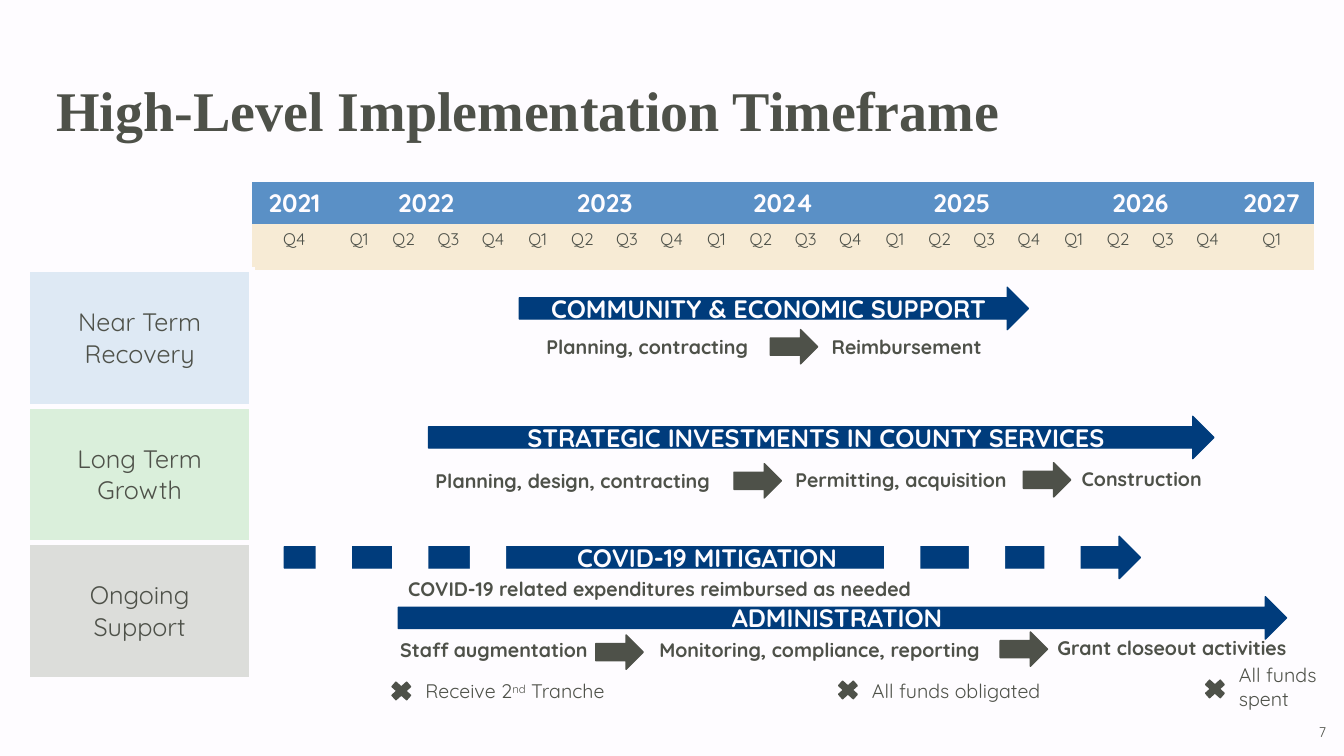
import pptx
import pptx.util
import pptx.dml.color
import pptx.enum.shapes
import pptx.enum.text
import pptx.oxml.ns
from lxml import etree

EMU_PER_PX = 9144
RGBColor = pptx.dml.color.RGBColor
Shape = pptx.enum.shapes.MSO_SHAPE
Align = pptx.enum.text.PP_ALIGN
Anchor = pptx.enum.text.MSO_ANCHOR

PAPER = RGBColor(0xFE, 0xFC, 0xFF)
INK = RGBColor(0x4E, 0x51, 0x49)
NAVY = RGBColor(0x00, 0x3C, 0x7C)
YEAR_BLUE = RGBColor(0x5A, 0x90, 0xC6)
QUARTER_SAND = RGBColor(0xF7, 0xEB, 0xD5)
TERM_BLUE = RGBColor(0xDE, 0xE9, 0xF4)
TERM_GREEN = RGBColor(0xDA, 0xEF, 0xDB)
TERM_GREY = RGBColor(0xDC, 0xDD, 0xDA)

BODY_FONT = "Quicksand"
TITLE_FONT = "Times New Roman"
NO_STYLE = "{2D5ABB26-0587-4C30-8999-92F81FD0307C}"

YEARS = range(2022, 2027)
TERMS = [
    ("Near Term Recovery", TERM_BLUE),
    ("Long Term Growth", TERM_GREEN),
    ("Ongoing\nSupport", TERM_GREY),
]
BARS = [
    ("ADMINISTRATION", 395, 592, 881),
    ("COVID-19 MITIGATION", 282, 532, 849),
    ("COMMUNITY & ECONOMIC SUPPORT", 515, 285, 505),
    ("STRATEGIC INVESTMENTS IN COUNTY SERVICES", 425, 413, 779),
]
DASH_GAPS = [313, 389, 466, 877, 961, 1036]
STEP_ARROWS = [(764, 327), (728, 460), (1015, 459), (591, 630), (992, 627)]
STEPS = [
    ("Planning, contracting", 532, 327, 232),
    ("Reimbursement", 815, 327, 368),
    ("Planning, design, contracting", 422, 460, 322),
    ("Permitting, acquisition", 779, 459, 368),
    ("Construction", 1063, 458, 254),
    ("COVID-19 related expenditures reimbursed as needed", 395, 567, 549),
    ("Staff augmentation", 387, 628, 207),
    ("Monitoring, compliance, reporting", 644, 628, 368),
    ("Grant closeout activities", 1039, 626, 254),
]
MILESTONES = [
    (["Receive 2", "nd", " Tranche"], 412, 669, 246, 673),
    (["All funds obligated"], 855, 669, 246, 672),
    (["All funds\nspent"], 1219, 653, 114, 671),
]


def px(length):
    return pptx.util.Emu(length * EMU_PER_PX)


def format_text(paragraph, size, color, bold=False, name=BODY_FONT, align=None):
    values = {"name": name, "size": pptx.util.Pt(size), "bold": bold}
    for attribute, value in values.items():
        setattr(paragraph.font, attribute, value)
    paragraph.font.color.rgb = color
    paragraph.alignment = align


def add_block(slide, kind, left, top, width, height, fill, outlined=True):
    shape = slide.shapes.add_shape(kind, px(left), px(top), px(width), px(height))
    shape.shadow.inherit = False
    shape.fill.solid()
    shape.fill.fore_color.rgb = fill
    if outlined:
        shape.line.color.rgb = fill
        shape.line.width = pptx.util.Pt(1)
    else:
        shape.line.fill.background()
    return shape


def add_bar(slide, text, left, top, width):
    bar = add_block(slide, Shape.RIGHT_ARROW, left, top, width, 42, NAVY)
    bar.text_frame.text = text
    bar.text_frame.vertical_anchor = Anchor.MIDDLE
    format_text(bar.text_frame.paragraphs[0], 18, PAPER, True, align=Align.CENTER)


def add_label(slide, text, left, top, width, height=34, size=14, bold=False, align=None):
    box = slide.shapes.add_textbox(px(left), px(top), px(width), px(height))
    box.text_frame.word_wrap = True
    box.text_frame.text = text
    for paragraph in box.text_frame.paragraphs:
        format_text(paragraph, size, INK, bold, align=align)
    return box


def add_milestone(slide, parts, left, top, width, cross_top):
    height = 57 if "\n" in parts[0] else 34
    label = add_label(slide, parts[0], left, top, width, height)
    for index, part in enumerate(parts[1:]):
        run = label.text_frame.paragraphs[0].add_run()
        run.text = part
        if index == 0:
            run._r.get_or_add_rPr().set("baseline", "30000")
    add_block(slide, Shape.MATH_MULTIPLY, left - 28, cross_top, 28, 25, INK)


def fill_cell(cell, text, fill, size, color, bold=False, anchor=Anchor.MIDDLE):
    cell.text = text
    cell.vertical_anchor = anchor
    cell.fill.solid()
    cell.fill.fore_color.rgb = fill
    for paragraph in cell.text_frame.paragraphs:
        format_text(paragraph, size, color, bold, align=Align.CENTER)


def add_borders(cell, sides):
    properties = cell._tc.get_or_add_tcPr()
    for index, side in enumerate(sides):
        line = etree.Element(pptx.oxml.ns.qn(f"a:ln{side}"), w=str(pptx.util.Pt(4.5)))
        solid = etree.SubElement(line, pptx.oxml.ns.qn("a:solidFill"))
        etree.SubElement(solid, pptx.oxml.ns.qn("a:srgbClr"), val=str(PAPER))
        properties.insert(index, line)


def add_calendar(slide):
    frame = slide.shapes.add_table(5, 23, px(27), px(181), px(1276), px(493))
    table = frame.table
    table.first_row = False
    table.horz_banding = False
    table._tbl.tblPr.find(pptx.oxml.ns.qn("a:tableStyleId")).text = NO_STYLE
    quarter_width = px(886) // 20
    widths = [px(223), px(84)] + [quarter_width] * 20 + [px(83)]
    for column, width in zip(table.columns, widths):
        column.width = width
    for row, height in zip(table.rows, [41, 45, 136, 135, 136]):
        row.height = px(height)
    for cell in table.iter_cells():
        cell.fill.background()

    for row in (0, 2, 3, 4):
        for first in range(2, 22, 4):
            table.cell(row, first).merge(table.cell(row, first + 3))
    year_columns = [(1, 2021), (22, 2027)]
    year_columns += [(2 + 4 * index, year) for index, year in enumerate(YEARS)]
    for column, year in year_columns:
        fill_cell(table.cell(0, column), str(year), YEAR_BLUE, 18, PAPER, True)
    for column in range(1, 23):
        cell = table.cell(1, column)
        cell.margin_left = cell.margin_right = 0
        quarter = (column + 2) % 4 + 1
        fill_cell(cell, f"Q{quarter}", QUARTER_SAND, 12, INK, anchor=Anchor.TOP)

    add_borders(table.cell(1, 0), "B")
    for row, (term, fill) in enumerate(TERMS, start=2):
        fill_cell(table.cell(row, 0), term, fill, 18, INK)
        add_borders(table.cell(row, 0), "LRTB")
        add_borders(table.cell(row, 1), "L")


def set_title(slide, text):
    title = slide.shapes.title
    position = {"left": 46, "top": 40, "width": 1194, "height": 145}
    for attribute, value in position.items():
        setattr(title, attribute, px(value))
    title.text_frame.text = text
    title.text_frame.vertical_anchor = Anchor.MIDDLE
    paragraph = title.text_frame.paragraphs[0]
    format_text(paragraph, 40, INK, True, TITLE_FONT, Align.LEFT)
    paragraph.line_spacing = 0.9


def main():
    presentation = pptx.Presentation()
    presentation.slide_width = px(1333)
    presentation.slide_height = px(750)
    slide = presentation.slides.add_slide(presentation.slide_layouts[5])
    slide.background.fill.solid()
    slide.background.fill.fore_color.rgb = PAPER

    set_title(slide, "High-Level Implementation Timeframe")
    add_calendar(slide)
    for bar in BARS:
        add_bar(slide, *bar)
    for left in DASH_GAPS:
        add_block(slide, Shape.RECTANGLE, left, 529, 36, 42, PAPER, outlined=False)
    for left, top in STEP_ARROWS:
        add_block(slide, Shape.RIGHT_ARROW, left, top, 47, 34, INK)
    for step in STEPS:
        add_label(slide, *step, bold=True)
    for milestone in MILESTONES:
        add_milestone(slide, *milestone)
    add_label(slide, "7", 1175, 713, 150, 25, size=10, align=Align.RIGHT)
    presentation.save("out.pptx")


if __name__ == "__main__":
    main()
